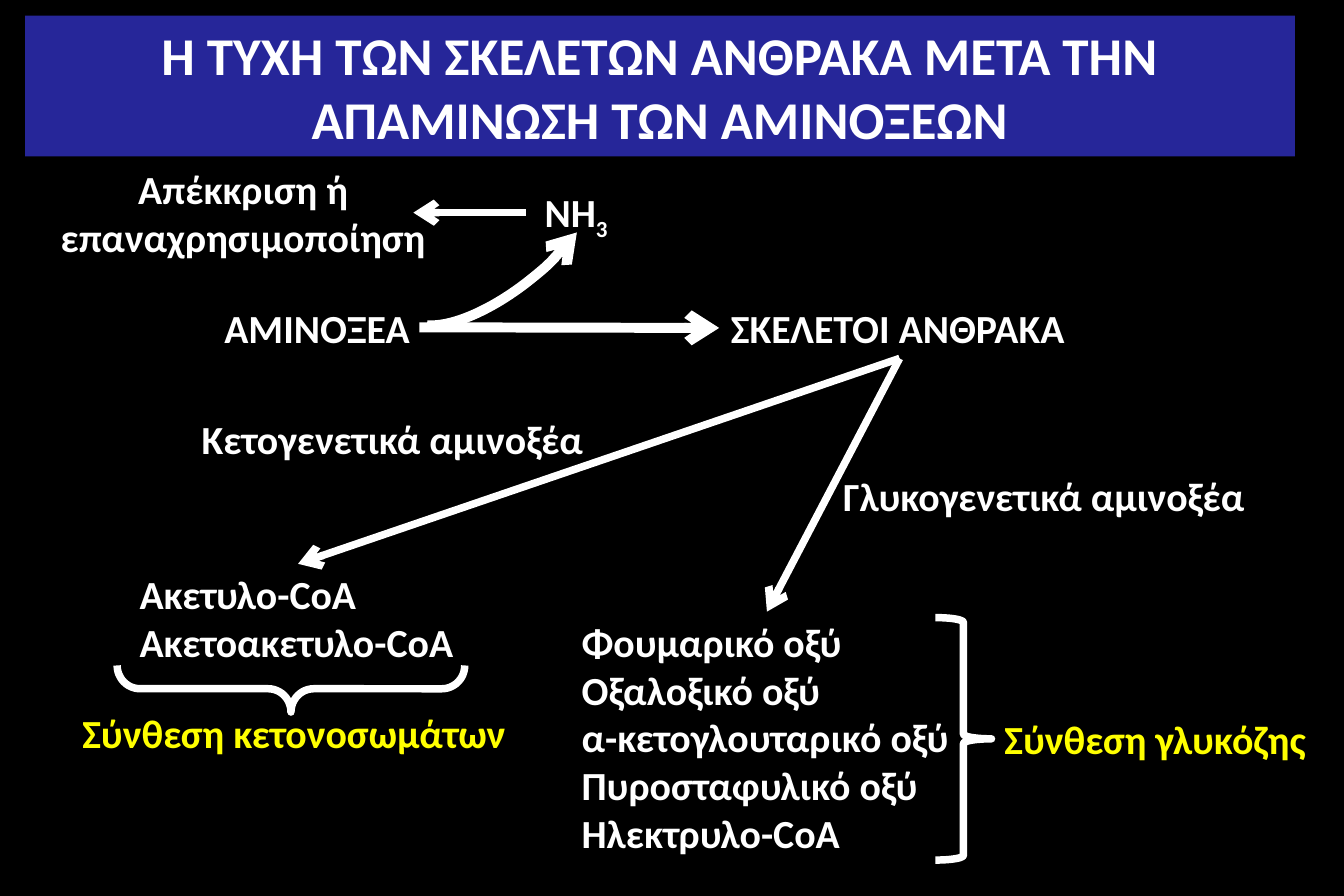
from dataclasses import dataclass

from lxml import etree
from pptx import Presentation
from pptx.dml.color import RGBColor
from pptx.enum import shapes, text
from pptx.oxml import ns

PX = 9144  # one px is a hundredth of an inch


@dataclass(frozen=True)
class Theme:
    back: str = "000000"
    band: str = "262699"
    ink: str = "FFFFFF"
    goal: str = "FFFF00"
    font: str = "Calibri"
    head: float = 32
    body: float = 24
    thick: float = 6
    thin: float = 4.5


T = Theme()


def rgb(code):
    return RGBColor.from_string(code)


def emu(*sizes):
    return [round(n * PX) for n in sizes]


def write(frame, words, size=T.body, color=T.ink, align=text.PP_ALIGN.LEFT, sub=""):
    """Fill a text frame, one paragraph a line, with an optional subscript."""
    frame.text = words
    for para in frame.paragraphs:
        para.alignment = align
        if sub:
            run = para.add_run()
            run.text = sub
            run._r.get_or_add_rPr().set("baseline", "-25000")
        for run in para.runs:
            font = run.font
            font.name, font.size, font.bold = T.font, round(size * 12700), True
            font.color.rgb = rgb(color)


def label(slide, box, words, wrap=False, **form):
    item = slide.shapes.add_textbox(*emu(*box))
    item.text_frame.word_wrap = wrap
    item.text_frame.auto_size = text.MSO_AUTO_SIZE.SHAPE_TO_FIT_TEXT
    write(item.text_frame, words, **form)
    return item


def ink(item, width, tip=None):
    """Draw the outline, with an arrowhead at headEnd or tailEnd."""
    item.line.color.rgb = rgb(T.ink)
    item.line.width = round(width * 12700)
    if tip:
        etree.SubElement(item.line._get_or_add_ln(), ns.qn("a:" + tip), type="arrow")


def arrow(slide, start, end, width=T.thin, source=None, target=None):
    """Join start to end; source and target are (shape, side) pairs."""
    line = slide.shapes.add_connector(shapes.MSO_CONNECTOR.STRAIGHT, *emu(*start, *end))
    if source:
        line.begin_connect(*source)
    if target:
        line.end_connect(*target)
    ink(line, width, "tailEnd")
    etree.SubElement(line._element.spPr, ns.qn("a:effectLst"))


def curve(slide, kind, box, adjust, turn=0, width=T.thin, tip=None):
    item = slide.shapes.add_shape(kind, *emu(*box))
    for i, value in enumerate(adjust):
        item.adjustments[i] = value
    item.rotation = turn
    item.shadow.inherit = False
    item.fill.background()
    ink(item, width, tip)


def heading(slide, box):
    title = slide.shapes.title
    title.left, title.top, title.width, title.height = emu(*box)
    title.fill.solid()
    title.fill.fore_color.rgb = rgb(T.band)
    frame = title.text_frame
    frame.word_wrap = True
    frame.auto_size = text.MSO_AUTO_SIZE.NONE
    frame.vertical_anchor = text.MSO_ANCHOR.MIDDLE
    write(frame, "Η ΤΥΧΗ ΤΩΝ ΣΚΕΛΕΤΩΝ ΑΝΘΡΑΚΑ ΜΕΤΑ ΤΗΝ ΑΠΑΜΙΝΩΣΗ ΤΩΝ ΑΜΙΝΟΞΕΩΝ",
          size=T.head, align=text.PP_ALIGN.CENTER)


def split(slide, box):
    """Amino acids lose ammonia; returns the carbon skeleton label."""
    x, y, w, h = box
    row = y + h - 51
    label(slide, (x + 138, row, 177, 51), "ΑΜΙΝΟΞΕΑ")
    carbon = label(slide, (x + w - 302, row, 302, 51), "ΣΚΕΛΕΤΟΙ ΑΝΘΡΑΚΑ")
    arrow(slide, (x + 311, row + 25), (x + w - 302, row + 25), T.thick, target=(carbon, 1))
    curve(slide, shapes.MSO_SHAPE.ARC, (x + 280, y + 30, 200, 79), (127.046, 210.462),
          141.1, T.thick, "headEnd")
    label(slide, (x + 406, y + 19, 75, 51), "ΝΗ", sub="3")
    arrow(slide, (x + 400, y + 45), (x + 306, y + 45))
    label(slide, (x, y, 327, 91), "Απέκκριση ή επαναχρησιμοποίηση", wrap=True,
          align=text.PP_ALIGN.CENTER)
    return carbon


def ketones(slide, box, carbon):
    x, y, w, h = box
    label(slide, (x + 100, y, 342, 51), "Κετογενετικά αμινοξέα")
    acids = label(slide, (x + 48, y + 130, 285, 91), "Ακετυλο-CoA\nΑκετοακετυλο-CoA")
    arrow(slide, (753, 300), (249, y + 130), source=(carbon, 2), target=(acids, 0))
    # The brace is turned to open upwards under the two products
    curve(slide, shapes.MSO_SHAPE.RIGHT_BRACE, (x + 165, y + 89, 39, 291), (0.491, 0.5), 90)
    label(slide, (x, y + h - 51, w, 51), "Σύνθεση κετονοσωμάτων", color=T.goal)


def glucose(slide, box, carbon):
    x, y, w, h = box
    label(slide, (x + 219, y, 359, 50), "Γλυκογενετικά αμινοξέα")
    acids = label(slide, (x, y + h - 212, 330, 212),
                  "Φουμαρικό οξύ\nΟξαλοξικό οξύ\nα-κετογλουταρικό οξύ\n"
                  "Πυροσταφυλικό οξύ\nΗλεκτρυλο-CoA")
    arrow(slide, (753, 300), (642, y + h - 212), source=(carbon, 2), target=(acids, 0))
    curve(slide, shapes.MSO_SHAPE.RIGHT_BRACE, (x + 306, y + h - 207, 47, 203), (0.083, 0.5))
    label(slide, (x + w - 274, y + h - 131, 274, 50), "Σύνθεση γλυκόζης", color=T.goal)


def main():
    deck = Presentation()
    deck.slide_width, deck.slide_height = emu(1125, 750)
    slide = deck.slides.add_slide(deck.slide_layouts.get_by_name("Title Only"))
    slide.background.fill.solid()
    slide.background.fill.fore_color.rgb = rgb(T.back)
    heading(slide, (21, 13, 1063, 118))
    carbon = split(slide, (40, 133, 864, 167))
    ketones(slide, (59, 342, 378, 297), carbon)
    glucose(slide, (477, 390, 628, 334), carbon)
    deck.save("out.pptx")


if __name__ == "__main__":
    main()
